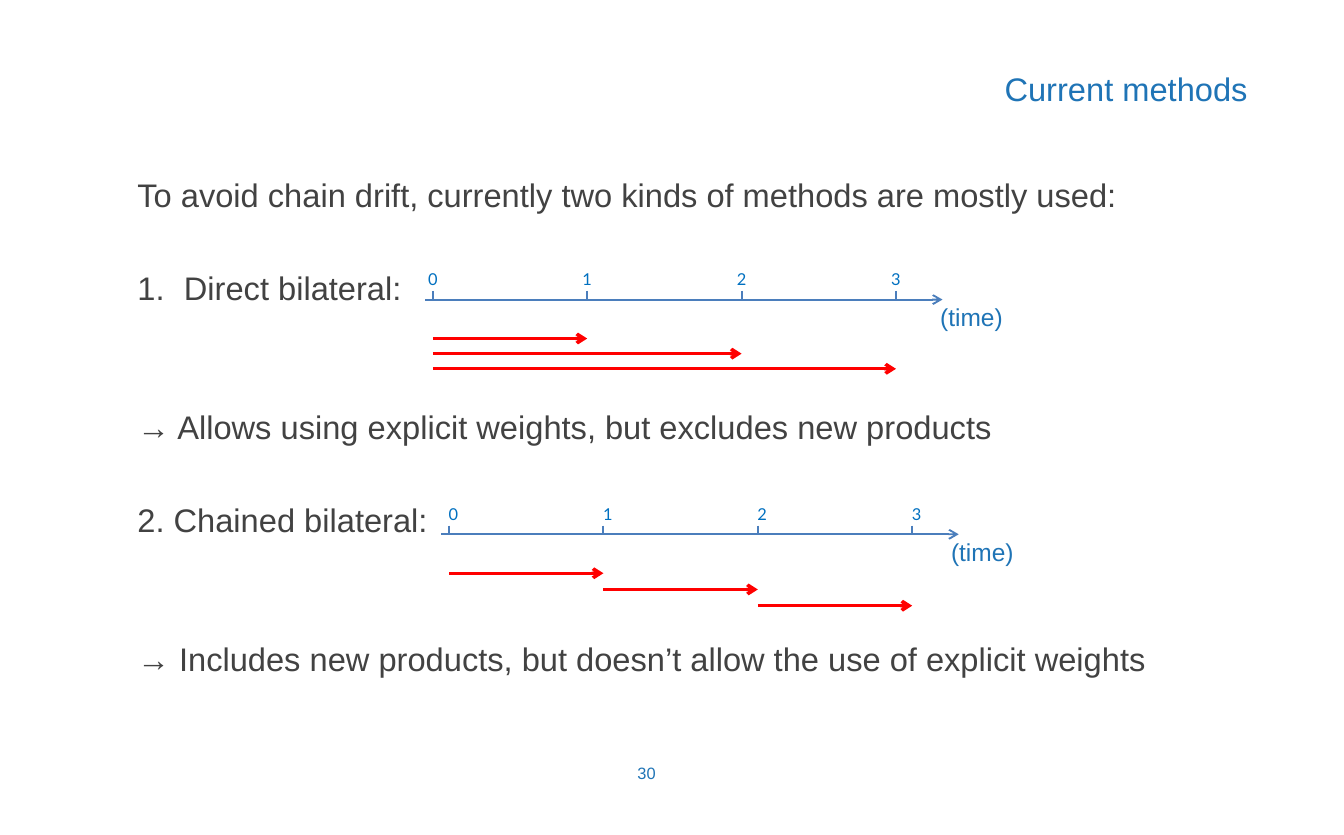
from dataclasses import dataclass

from lxml import etree
from pptx import Presentation
from pptx import util as u
from pptx.dml.color import RGBColor
from pptx.enum import shapes, text
from pptx.oxml import ns

TITLE = "Current methods"
PAGE_NUMBER = "30"

# (row of the text grid, wording)
BODY = [
    (0, "To avoid chain drift, currently two kinds of methods are mostly used:"),
    (2, "1.\tDirect bilateral:"),
    (5, "→ Allows using explicit weights, but excludes new products"),
    (7, "2. Chained bilateral:"),
    (10, "→ Includes new products, but doesn’t allow the use of explicit weights"),
]

PERIODS = ["0", "1", "2", "3"]
TIME_LABEL = "(time)"

# origin: place of period 0 on the axis; comparisons: (from period, to period)
TIMELINES = [
    dict(origin=(4.0, 2.77), row_gap=0.14, time_at=(8.59, 2.74), label_shift=0,
         comparisons=[(0, 1), (0, 2), (0, 3)]),
    dict(origin=(4.15, 4.94), row_gap=0.15, time_at=(8.69, 4.92), label_shift=0.04,
         comparisons=[(0, 1), (1, 2), (2, 3)]),
]


@dataclass(frozen=True)
class Theme:
    font: str = "Arial"
    tick_font: str = "Lato"
    ink: str = "424242"
    accent: str = "1F74B6"
    tick_ink: str = "0070C0"
    axis: str = "4B7EBC"
    arrow: str = "FF0000"
    body_size: float = 21.7
    time_size: float = 16.3
    small_size: float = 10.9
    axis_width: float = 1.25
    arrow_width: float = 2.25


THEME = Theme()
WIDTH, HEIGHT = 12.42, 7.72
ROW_PITCH = 30.4            # points from one body row to the next
LINE_HEIGHT = 24.9          # points taken by one line of body text
NUMBER_TAB = 0.43
PERIOD_STEP = 4.28 / 3
AXIS_BEFORE, AXIS_AFTER = 0.07, 4.71
TICK = 0.08
LABEL_WIDTH, LABEL_HEIGHT, LABEL_RISE = 0.2, 0.28, 0.33
FIRST_ARROW_DROP = 0.36


def style(para, size, color, font=THEME.font, align=text.PP_ALIGN.LEFT):
    para.alignment = align
    para.font.size = u.Pt(size)
    para.font.name = font
    para.font.color.rgb = RGBColor.from_string(color)


def place(box, left, top, width, height):
    box.left, box.top = u.Inches(left), u.Inches(top)
    box.width, box.height = u.Inches(width), u.Inches(height)


def add_text(parent, wording, at, *styling, wrap=True, side_inset=0.1, **options):
    box = parent.add_textbox(*map(u.Inches, at))
    frame = box.text_frame
    frame.word_wrap = wrap
    frame.margin_left = frame.margin_right = u.Inches(side_inset)
    frame.text = wording
    style(frame.paragraphs[0], *styling, **options)


def add_line(parent, start, end, color, width, arrow=False):
    line = parent.add_connector(shapes.MSO_CONNECTOR.STRAIGHT,
                                *map(u.Inches, (*start, *end)))
    line.line.color.rgb = RGBColor.from_string(color)
    line.line.width = u.Pt(width)
    if arrow:
        etree.SubElement(line.line._get_or_add_ln(), ns.qn("a:tailEnd"), type="arrow")
    etree.SubElement(line._element.spPr, ns.qn("a:effectLst"))


def add_title(slide):
    title = slide.shapes.title
    place(title, 8.71, 0.59, 2.92, 0.47)
    title.text_frame.text = TITLE
    title.text_frame.vertical_anchor = text.MSO_ANCHOR.TOP
    style(title.text_frame.paragraphs[0], THEME.body_size, THEME.accent,
          align=text.PP_ALIGN.RIGHT)


def add_body(slide):
    box = slide.shapes.add_textbox(0, 0, 0, 0)
    place(box, 1.15, 1.6, 10.27, 4.96)
    frame = box.text_frame
    frame.word_wrap = True
    frame.margin_left, frame.margin_right = u.Inches(0.12), u.Inches(0.04)
    frame.margin_top = frame.margin_bottom = u.Inches(0.02)
    previous_row = None
    for row, wording in BODY:
        if previous_row is None:
            para = frame.paragraphs[0]
        else:
            para = frame.add_paragraph()
            para.space_before = u.Pt((row - previous_row) * ROW_PITCH - LINE_HEIGHT)
        para.text = wording
        if "\t" in wording:
            tabs = etree.SubElement(para._p.get_or_add_pPr(), ns.qn("a:tabLst"))
            etree.SubElement(tabs, ns.qn("a:tab"), pos=str(u.Inches(NUMBER_TAB)), algn="l")
        style(para, THEME.body_size, THEME.ink)
        previous_row = row


def add_timeline(slide, origin, row_gap, time_at, label_shift, comparisons):
    """Draw an axis with its periods and one arrow per comparison of two periods."""
    group = slide.shapes.add_group_shape().shapes
    left, axis_y = origin
    period_x = [left + i * PERIOD_STEP for i in range(len(PERIODS))]
    add_line(group, (left - AXIS_BEFORE, axis_y), (left + AXIS_AFTER, axis_y),
             THEME.axis, THEME.axis_width, arrow=True)
    for x, period in zip(period_x, PERIODS):
        add_line(group, (x, axis_y - TICK), (x, axis_y), THEME.axis, THEME.axis_width)
        add_text(group, period,
                 (x + label_shift - LABEL_WIDTH / 2, axis_y - LABEL_RISE,
                  LABEL_WIDTH, LABEL_HEIGHT),
                 THEME.small_size, THEME.tick_ink, side_inset=0,
                 font=THEME.tick_font, align=text.PP_ALIGN.CENTER)
    for i, (first, last) in enumerate(comparisons):
        y = axis_y + FIRST_ARROW_DROP + i * row_gap
        add_line(group, (period_x[first], y), (period_x[last], y),
                 THEME.arrow, THEME.arrow_width, arrow=True)
    add_text(slide.shapes, TIME_LABEL, (*time_at, 0.78, 0.38),
             THEME.time_size, THEME.accent, wrap=False)


def main():
    deck = Presentation()
    deck.slide_width, deck.slide_height = u.Inches(WIDTH), u.Inches(HEIGHT)
    slide = deck.slides.add_slide(deck.slide_layouts[5])
    add_title(slide)
    add_body(slide)
    add_text(slide.shapes, PAGE_NUMBER, (5.78, 7.01, 0.39, 0.28),
             THEME.small_size, THEME.accent, side_inset=0.05,
             align=text.PP_ALIGN.CENTER)
    for timeline in TIMELINES:
        add_timeline(slide, **timeline)
    deck.save("out.pptx")


if __name__ == "__main__":
    main()
